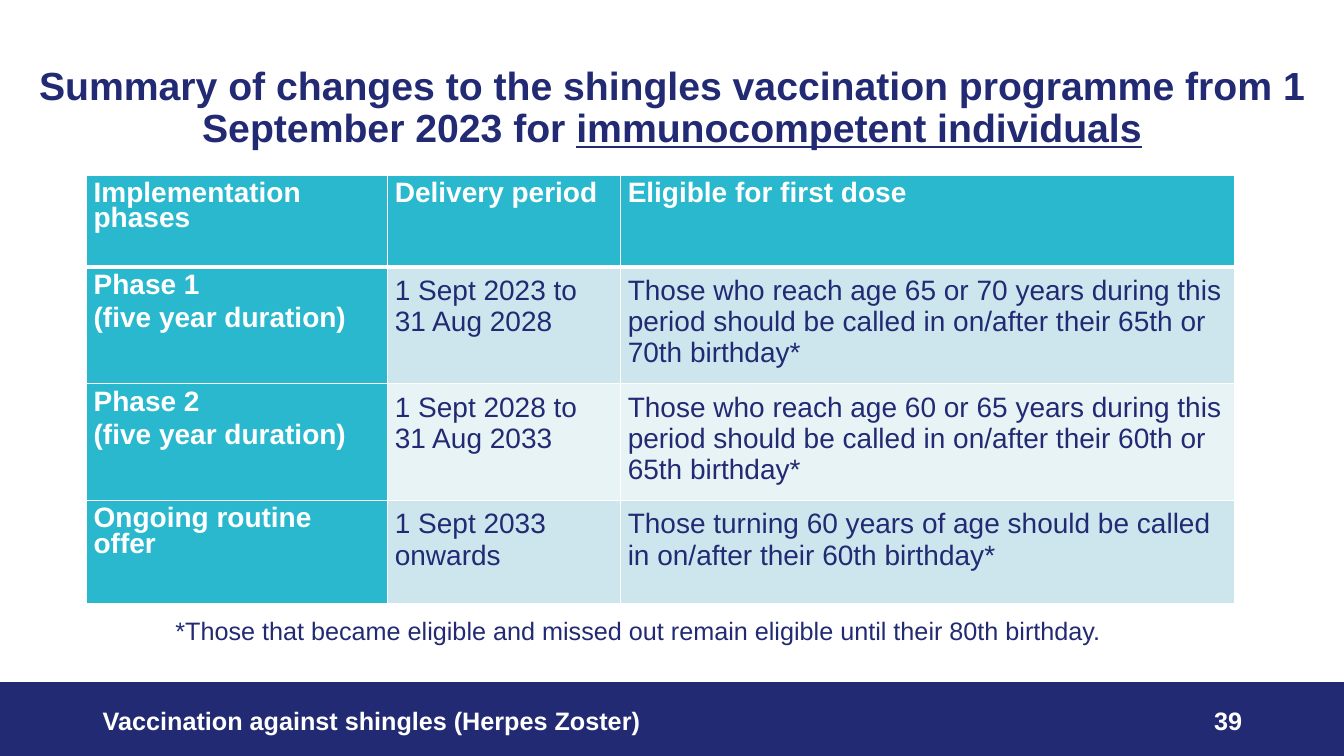
from lxml import etree
from pptx import Presentation
from pptx import util as u
from pptx.dml.color import RGBColor
from pptx.enum import shapes, text
from pptx.oxml import ns

NAVY = RGBColor(0x21, 0x2A, 0x73)
TEAL = RGBColor(0x29, 0xB8, 0xCE)
PALE = RGBColor(0xCD, 0xE6, 0xED)
PALER = RGBColor(0xE8, 0xF3, 0xF6)
WHITE = RGBColor(0xFF, 0xFF, 0xFF)

TITLE = [
    ("Summary of changes to the shingles vaccination programme from 1 September 2023 for ", False),
    ("immunocompetent individuals", True),
]
FOOTER = "Vaccination against shingles (Herpes Zoster)"
PAGE_NUMBER = "39"
FOOTNOTE = "*Those that became eligible and missed out remain eligible until their 80th birthday."
PHASES = [
    (["Implementation phases"], ["Delivery period"], ["Eligible for first dose"]),
    (["Phase 1", "(five year duration)"], ["1 Sept 2023 to 31 Aug 2028"],
     ["Those who reach age 65 or 70 years during this period should be called in "
      "on/after their 65th or 70th birthday*"]),
    (["Phase 2", "(five year duration)"], ["1 Sept 2028 to 31 Aug 2033"],
     ["Those who reach age 60 or 65 years during this period should be called in "
      "on/after their 60th or 65th birthday*"]),
    (["Ongoing routine offer"], ["1 Sept 2033 onwards"],
     ["Those turning 60 years of age should be called in on/after their 60th birthday*"]),
]
COLUMN_WIDTHS = [7.59, 5.87, 15.47]
ROW_HEIGHTS = [2.31, 2.54, 2.46, 2.59]
CELL_FORMAT = {
    "margin_left": u.Cm(0.18), "margin_right": u.Cm(0.18),
    "margin_top": u.Cm(0.2), "margin_bottom": u.Cm(0.2),
}
HEADING_FORMAT = {"line_spacing": u.Pt(18), "space_after": u.Pt(6)}
BODY_FORMAT = {"space_after": u.Pt(6)}


def apply(target, formats):
    for name, value in formats.items():
        setattr(target, name, value)


def add_span(para, words, size, colour, bold=False, underline=None):
    span = para.add_run()
    span.text = words
    apply(span.font, {"name": "Arial", "size": u.Pt(size), "bold": bold, "underline": underline})
    span.font.color.rgb = colour


def add_box(page, place, spans, size, colour, bold=False, **para_format):
    box = page.shapes.add_textbox(*map(u.Cm, place))
    box.text_frame.word_wrap = True
    para = box.text_frame.paragraphs[0]
    apply(para, para_format)
    for words, underline in spans:
        add_span(para, words, size, colour, bold, underline or None)


def add_borders(cell, bottom_width):
    properties = cell._tc.get_or_add_tcPr()
    widths = {"lnL": 1, "lnR": 1, "lnT": 1, "lnB": bottom_width}
    for position, (side, width) in enumerate(widths.items()):
        line = etree.Element(ns.qn(f"a:{side}"), w=str(u.Pt(width)))
        fill = etree.SubElement(line, ns.qn("a:solidFill"))
        etree.SubElement(fill, ns.qn("a:srgbClr"), val=str(WHITE))
        properties.insert(position, line)


def fill_cell(cell, lines, row, column):
    heading = row == 0 or column == 0
    apply(cell, CELL_FORMAT)
    cell.fill.solid()
    cell.fill.fore_color.rgb = TEAL if heading else PALE if row % 2 else PALER
    add_borders(cell, 1 if row else 3)
    for index, words in enumerate(lines):
        frame = cell.text_frame
        para = frame.add_paragraph() if index else frame.paragraphs[0]
        apply(para, HEADING_FORMAT if heading else BODY_FORMAT)
        add_span(para, words, 20, WHITE if heading else NAVY, heading)


def add_phase_table(page):
    table = page.shapes.add_table(
        len(PHASES), len(COLUMN_WIDTHS), u.Cm(2.18), u.Cm(4.42),
        u.Cm(sum(COLUMN_WIDTHS)), u.Cm(sum(ROW_HEIGHTS))).table
    for column, width in zip(table.columns, COLUMN_WIDTHS):
        column.width = u.Cm(width)
    for row, height in zip(table.rows, ROW_HEIGHTS):
        row.height = u.Cm(height)
    for row, phase in enumerate(PHASES):
        for column, lines in enumerate(phase):
            fill_cell(table.cell(row, column), lines, row, column)


def main():
    deck = Presentation()
    apply(deck, {"slide_width": u.Cm(33.87), "slide_height": u.Cm(19.05)})
    page = deck.slides.add_slide(deck.slide_layouts[6])

    band = page.shapes.add_shape(
        shapes.MSO_SHAPE.RECTANGLE, 0, u.Cm(17.2), deck.slide_width, u.Cm(1.85))
    band.shadow.inherit = False
    band.fill.solid()
    band.fill.fore_color.rgb = NAVY
    band.line.color.rgb = NAVY
    band.line.width = u.Pt(1)

    add_box(page, (0.36, 1.55, 33.15, 2.84), TITLE, 28, NAVY, True,
            alignment=text.PP_ALIGN.CENTER, line_spacing=0.9)
    add_box(page, (2.34, 17.65, 20.32, 1.02), [(FOOTER, False)], 18, WHITE, True)
    add_box(page, (23.93, 17.65, 7.62, 1.02), [(PAGE_NUMBER, False)], 18, WHITE, True,
            alignment=text.PP_ALIGN.RIGHT)
    add_phase_table(page)
    add_box(page, (4.17, 15.39, 26.95, 1.02), [(FOOTNOTE, False)], 18, NAVY)
    deck.save("out.pptx")


if __name__ == "__main__":
    main()
